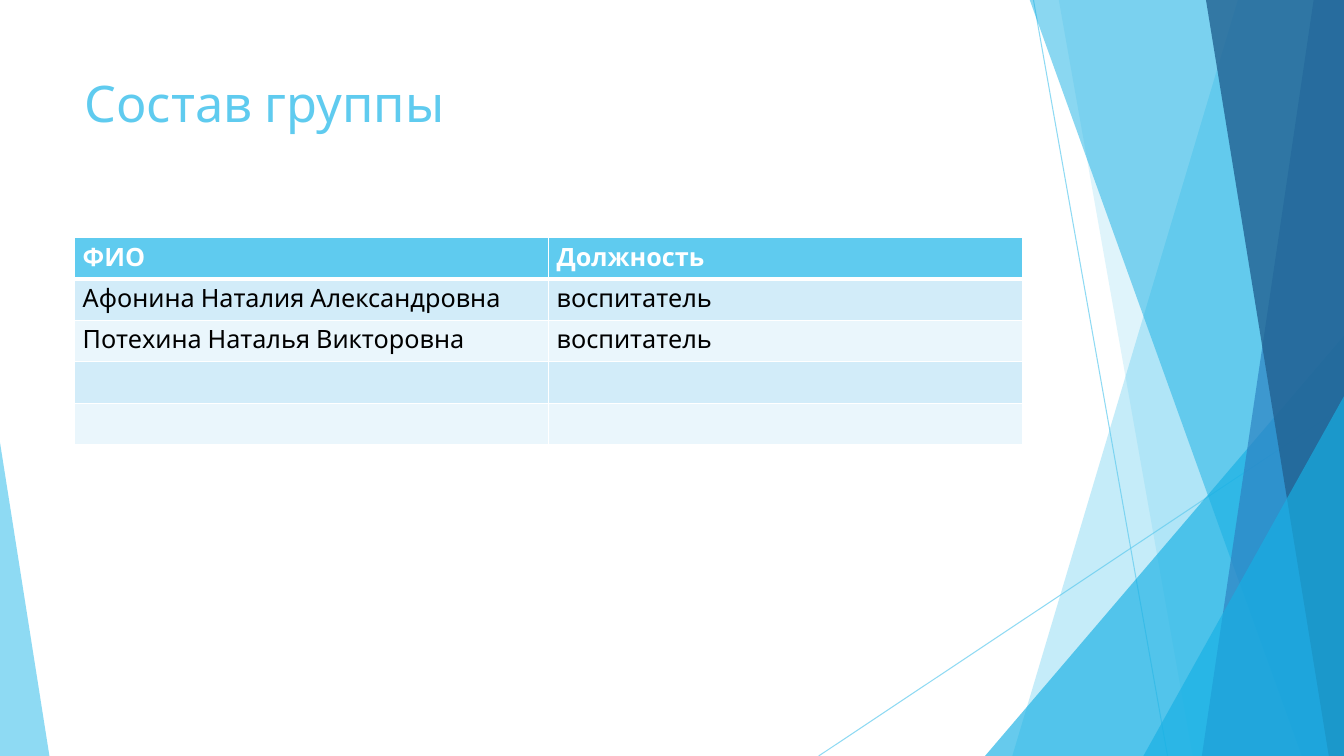
import pptx
import pptx.dml.color
import pptx.enum.shapes
import pptx.enum.text
import pptx.oxml
import pptx.oxml.ns
import pptx.util
from pptx.util import Inches

RGBColor = pptx.dml.color.RGBColor
SKY = RGBColor(0x5F, 0xCB, 0xEF)
CYAN = RGBColor(0x17, 0xB0, 0xE4)
BLUE = RGBColor(0x2E, 0x83, 0xC3)
NAVY = RGBColor(0x22, 0x62, 0x92)
BAND_DARK = RGBColor(0xD2, 0xEC, 0xF9)
BAND_LIGHT = RGBColor(0xEA, 0xF6, 0xFC)
WHITE = RGBColor(0xFF, 0xFF, 0xFF)
BLACK = RGBColor(0, 0, 0)

WIDTH, HEIGHT, TOP = 13.33, 7.5, -0.01
STAFF = [
    ("ФИО", "Должность"),
    ("Афонина Наталия Александровна", "воспитатель"),
    ("Потехина Наталья Викторовна", "воспитатель"),
    ("", ""),
    ("", ""),
]


def write_text(frame, text, size=18, color=BLACK, bold=False, font="Karla"):
    paragraph = frame.paragraphs[0]
    paragraph.text = text
    paragraph.font.size = pptx.util.Pt(size)
    for run in paragraph.runs:
        run.font.name = font
        run.font.size = pptx.util.Pt(size)
        run.font.bold = bold
        run.font.color.rgb = color


def set_opacity(element, percent):
    for color in element.iter(pptx.oxml.ns.qn("a:srgbClr")):
        alpha = pptx.oxml.parse_xml(
            f'<a:alpha {pptx.oxml.ns.nsdecls("a")} val="{percent * 1000}"/>')
        color.append(alpha)


class SlideBuilder:
    """Draws styled elements on the current slide."""

    def __init__(self, slide):
        self.slide = slide
        self.shapes = slide.shapes

    def line(self, start, end):
        connector = self.shapes.add_connector(
            pptx.enum.shapes.MSO_CONNECTOR.STRAIGHT,
            *map(Inches, start + end))
        connector.line.color.rgb = SKY
        connector.line.width = pptx.util.Pt(0.75)
        properties = connector._element.spPr
        set_opacity(properties, 70)
        properties.append(pptx.oxml.parse_xml(
            f'<a:effectLst {pptx.oxml.ns.nsdecls("a")}/>'))

    def paint(self, shape, color, opacity):
        shape.shadow.inherit = False
        shape.fill.solid()
        shape.fill.fore_color.rgb = color
        shape.line.fill.background()
        set_opacity(shape._element.spPr, opacity)

    def band(self, top_x, bottom_x, color, opacity):
        builder = self.shapes.build_freeform(Inches(top_x), Inches(TOP))
        corners = [(WIDTH, TOP), (WIDTH, HEIGHT), (bottom_x, HEIGHT)]
        builder.add_line_segments(
            [(Inches(x), Inches(y)) for x, y in corners], close=True)
        self.paint(builder.convert_to_shape(), color, opacity)

    def triangle(self, left, top, width, apex, color, opacity):
        shape = self.shapes.add_shape(
            pptx.enum.shapes.MSO_SHAPE.ISOSCELES_TRIANGLE,
            Inches(left), Inches(top), Inches(width), Inches(HEIGHT - top))
        shape.adjustments[0] = apex
        self.paint(shape, color, opacity)

    def title(self, text, left, top, width, height):
        box = self.shapes.add_textbox(*map(Inches, (left, top, width, height)))
        box.text_frame.word_wrap = True
        box.text_frame.vertical_anchor = pptx.enum.text.MSO_ANCHOR.TOP
        write_text(box.text_frame, text, size=36, color=SKY)

    def cell_borders(self, cell, widths):
        properties = cell._tc.get_or_add_tcPr()
        for side, width in widths.items():
            properties.append(pptx.oxml.parse_xml(
                f'<a:ln{side} {pptx.oxml.ns.nsdecls("a")} w="{pptx.util.Pt(width)}">'
                f'<a:solidFill><a:srgbClr val="{WHITE}"/></a:solidFill></a:ln{side}>'))

    def table(self, rows, left, top, width, row_height):
        table = self.shapes.add_table(
            len(rows), len(rows[0]), Inches(left), Inches(top),
            Inches(width), Inches(row_height * len(rows))).table
        for row_index, values in enumerate(rows):
            table.rows[row_index].height = Inches(row_height)
            header = row_index == 0
            band = BAND_DARK if row_index % 2 else BAND_LIGHT
            for column_index, value in enumerate(values):
                cell = table.cell(row_index, column_index)
                cell.margin_left = cell.margin_right = Inches(0.08)
                cell.margin_top = cell.margin_bottom = Inches(0.05)
                self.cell_borders(cell, {
                    "L": 1, "R": 1, "T": 3 if row_index == 1 else 1,
                    "B": 3 if header else 1})
                cell.fill.solid()
                cell.fill.fore_color.rgb = SKY if header else band
                write_text(cell.text_frame, value, bold=header,
                           color=WHITE if header else BLACK)


def main():
    presentation = pptx.Presentation()
    presentation.slide_width = Inches(WIDTH)
    presentation.slide_height = Inches(HEIGHT)
    slide = presentation.slides.add_slide(presentation.slide_layouts[6])
    builder = SlideBuilder(slide)

    builder.line((10.25, 0), (11.58, HEIGHT))
    builder.line((WIDTH, 4.03), (8.12, HEIGHT))
    builder.band(12.28, 10.04, SKY, 36)
    builder.band(10.5, 11.83, SKY, 20)
    builder.triangle(9.77, 3.33, 3.56, 1, CYAN, 66)
    builder.band(10.21, 12.91, CYAN, 50)
    builder.band(13.03, 11.92, BLUE, 70)
    builder.band(11.96, 13.18, NAVY, 80)
    builder.triangle(11.34, 3.93, 1.99, 1, CYAN, 66)
    builder.triangle(0, 4.39, 0.49, 0, SKY, 70)

    builder.title("Состав группы", 0.74, 0.67, 9.4, 1.44)
    builder.table(STAFF, 0.74, 2.36, 9.4, 0.41)
    presentation.save("out.pptx")


if __name__ == "__main__":
    main()
